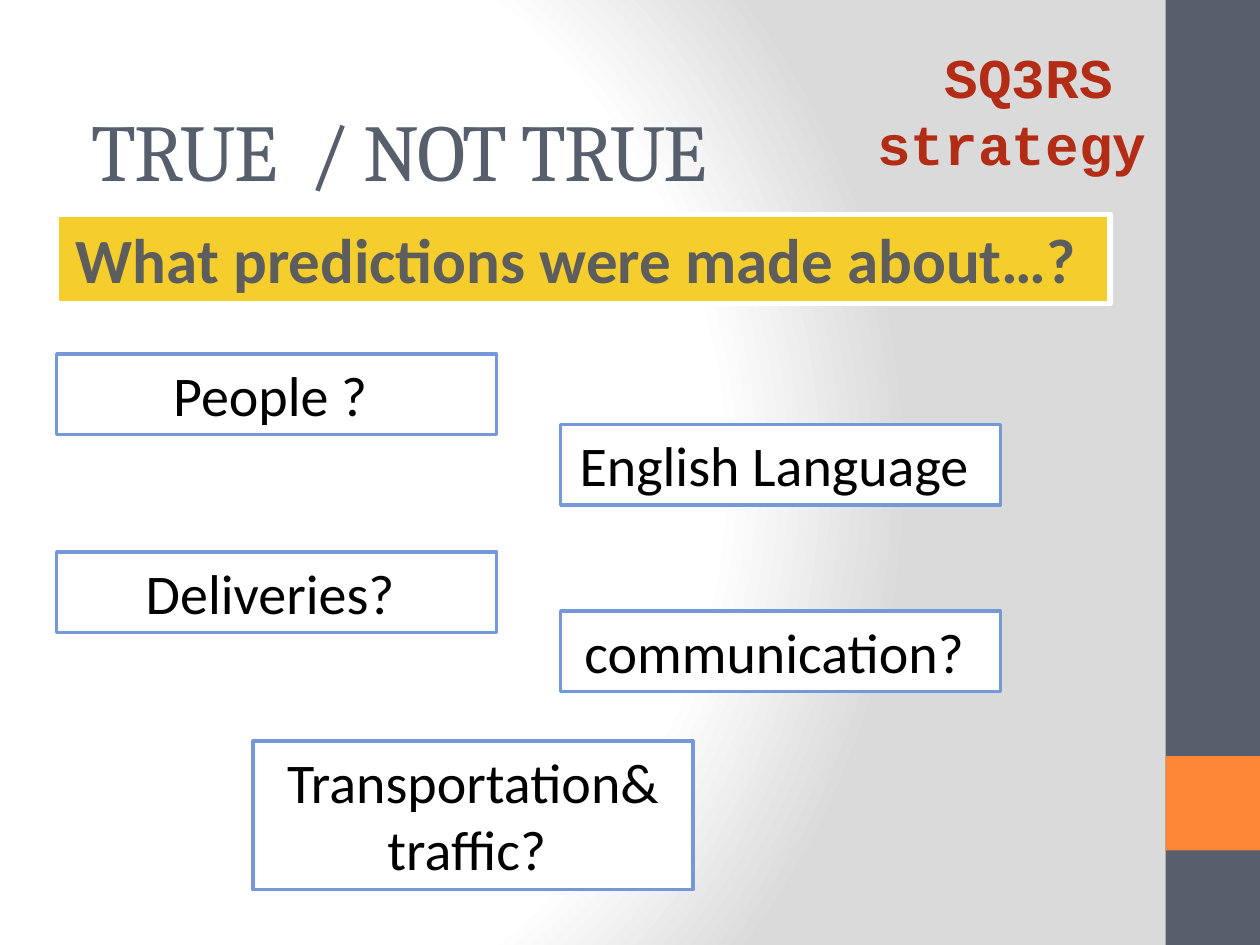
"""Build the true / not true prediction slide."""
from lxml import etree
from pptx import Presentation
from pptx.dml.color import RGBColor
from pptx.enum.shapes import MSO_SHAPE
from pptx.enum.text import MSO_ANCHOR, PP_ALIGN
from pptx.oxml.ns import qn
from pptx.util import Inches, Pt

RECTANGLE = MSO_SHAPE.RECTANGLE
MIDDLE = MSO_ANCHOR.MIDDLE
CENTER, LEFT = PP_ALIGN.CENTER, PP_ALIGN.LEFT

WIDTH, HEIGHT = 10, 7.5
COLORS = {
    "white": "FFFFFF", "shade": "DADADA", "slate": "575F6D",
    "orange": "FE8637", "yellow": "F5CD2D", "blue": "7598D9",
    "gray": "5D5D5D", "black": "000000", "red": "B32C16",
}
BACKDROP_STOPS = [(0, "white"), (75, "white"), (100, "shade")]
BACKDROP_FOCUS = {"l": 20, "t": 50, "r": 100, "b": 50}

TITLE = [("TRUE", -1), (" ", 8), ("/ NOT TRUE", -1)]
QUESTION = [("What predictions were made about…? ", 0)]
STRATEGY = [("SQ3RS strategy ", 0)]
COLUMNS = {"left": 0.45, "middle": 2.01, "right": 4.45}
CARD_WIDTH, LINE_HEIGHT, CARD_PADDING = 3.49, 0.54, 0.1
CARDS = [
    ("People ? ", "left", 2.81, 1),
    ("English Language ", "right", 3.37, 1),
    ("Deliveries? ", "left", 4.38, 1),
    ("communication? ", "right", 4.85, 1),
    ("Transportation& traffic? ", "middle", 5.88, 2),
]
SIDEBAR = 0.075 * WIDTH


def color(name):
    return RGBColor.from_string(COLORS[name])


def paint_backdrop(page):
    page.background.fill.gradient()
    gradient = page._element.find(".//" + qn("a:gradFill"))
    for child in list(gradient):
        gradient.remove(child)
    stops = etree.SubElement(gradient, qn("a:gsLst"))
    for position, name in BACKDROP_STOPS:
        stop = etree.SubElement(stops, qn("a:gs"), pos=str(position * 1000))
        etree.SubElement(stop, qn("a:srgbClr"), val=COLORS[name])
    circle = etree.SubElement(gradient, qn("a:path"), path="circle")
    focus = {side: str(share * 1000) for side, share in BACKDROP_FOCUS.items()}
    etree.SubElement(circle, qn("a:fillToRect"), **focus)


def add_panel(page, area, fill, line=None, weight=0):
    panel = page.shapes.add_shape(RECTANGLE, *map(Inches, area))
    panel.shadow.inherit = False
    panel.fill.solid()
    panel.fill.fore_color.rgb = color(fill)
    if line:
        panel.line.color.rgb = color(line)
        panel.line.width = Pt(weight)
    else:
        panel.line.fill.background()
    return panel


def write(box, spans, font="Calibri", size=32, ink="black", bold=False,
          align=CENTER, anchor=MSO_ANCHOR.TOP, wrap=True, indent=0.1):
    frame = box.text_frame
    frame.word_wrap = wrap
    frame.vertical_anchor = anchor
    frame.margin_left = Inches(indent)
    para = frame.paragraphs[0]
    para.alignment = align
    for text, spacing in spans:
        span = para.add_run()
        span.text = text
        span.font.name = font
        span.font.size = Pt(size)
        span.font.bold = bold
        span.font.color.rgb = color(ink)
        if spacing:
            span.font._element.set("spc", str(spacing * 100))


def main():
    deck = Presentation()
    deck.slide_width, deck.slide_height = Inches(WIDTH), Inches(HEIGHT)
    page = deck.slides.add_slide(deck.slide_layouts[6])
    paint_backdrop(page)

    edge = WIDTH - SIDEBAR
    add_panel(page, (edge, 0, SIDEBAR, HEIGHT), "slate")
    add_panel(page, (edge, 0.8 * HEIGHT, SIDEBAR, SIDEBAR), "orange")

    title = page.shapes.add_textbox(*map(Inches, (0.48, 0.56, 8.33, 1.25)))
    write(title, TITLE, font="Cambria", size=46, ink="slate", align=LEFT,
          anchor=MIDDLE, indent=0.25)

    banner = add_panel(page, (COLUMNS["left"], 1.7, 8.36, 0.71),
                       "yellow", "white", 3)
    write(banner, QUESTION, size=36, ink="gray", bold=True, wrap=False)

    for text, column, top, lines in CARDS:
        height = lines * LINE_HEIGHT + CARD_PADDING
        card = add_panel(page, (COLUMNS[column], top, CARD_WIDTH, height),
                         "white", "blue", 2)
        write(card, [(text, 0)])

    strategy = page.shapes.add_textbox(*map(Inches, (6.34, 0.29, 3.65, 1.18)))
    write(strategy, STRATEGY, font="Courier New", ink="red", bold=True)

    deck.save("out.pptx")


if __name__ == "__main__":
    main()
